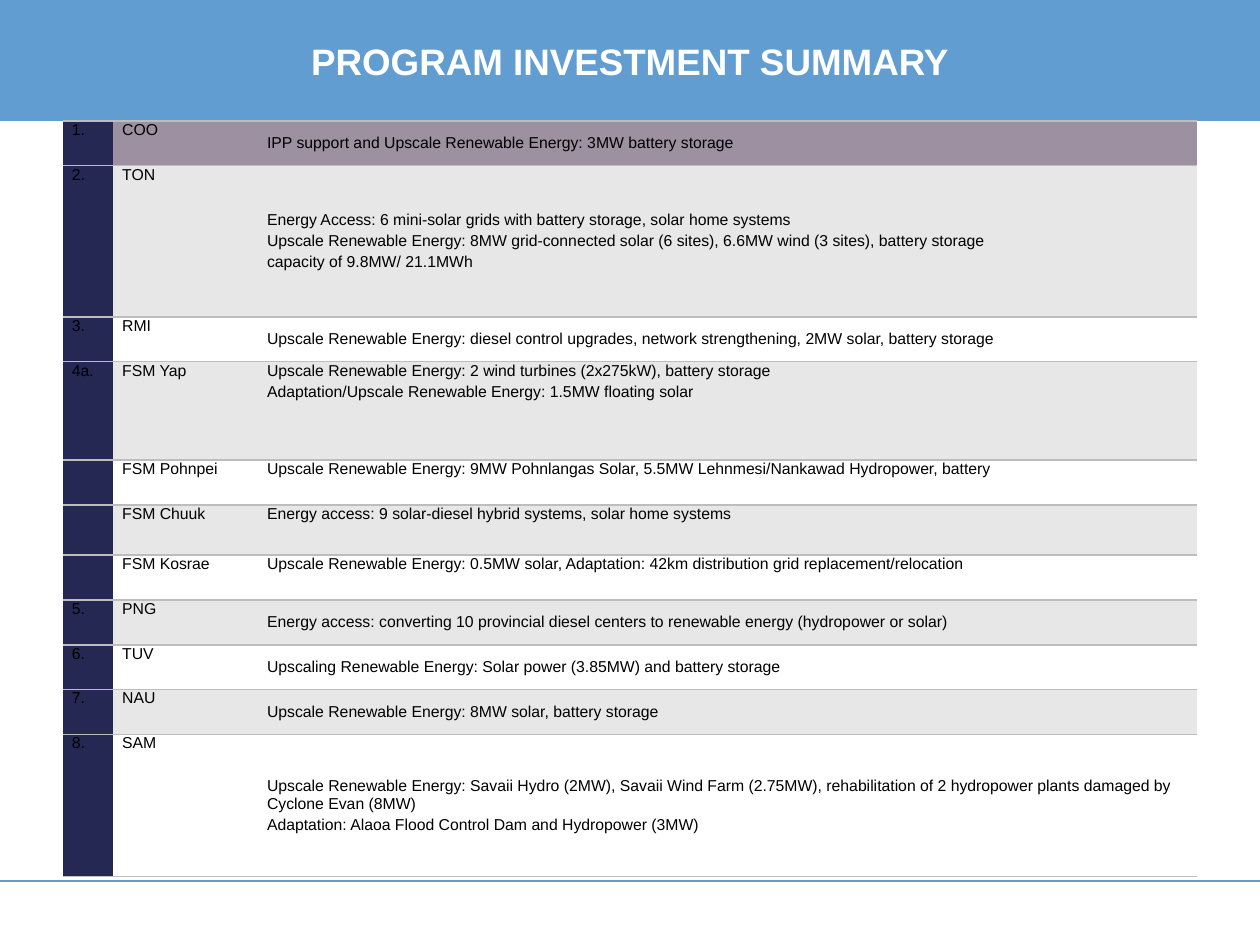
from pptx import Presentation
from pptx.dml.color import RGBColor
from pptx.enum.shapes import MSO_CONNECTOR as Connector, MSO_SHAPE as Preset
from pptx.enum.text import MSO_ANCHOR as Anchor, PP_ALIGN as Align
from pptx.oxml.ns import qn
from pptx.util import Inches, Pt
from lxml.etree import SubElement, Element

COLORS = {
    "band": "629DD1",
    "navy": "242852",
    "mauve": "9D90A0",
    "gray": "E7E7E7",
    "white": "FFFFFF",
    "border": "BDBDBD",
    "text": "000000",
}
COLUMN_WIDTHS = [0.4, 1.15, 7.45]
TABLE_HEIGHT = 6
TALL_ROWS = {1: 1.2, 3: 0.78, 5: 0.4, 10: 1.13}

PROGRAMS = [
    ("1.", "COO", ["IPP support and Upscale Renewable Energy: 3MW battery storage"]),
    ("2.", "TON", [
        "Energy Access: 6 mini-solar grids with battery storage, solar home systems",
        "Upscale Renewable Energy: 8MW grid-connected solar (6 sites), 6.6MW wind (3 sites), battery storage",
        "capacity of 9.8MW/ 21.1MWh"]),
    ("3.", "RMI", ["Upscale Renewable Energy: diesel control upgrades, network strengthening, 2MW solar, battery storage"]),
    ("4a.", "FSM Yap", [
        "Upscale Renewable Energy: 2 wind turbines (2x275kW), battery storage",
        "Adaptation/Upscale Renewable Energy: 1.5MW floating solar"]),
    ("", "FSM Pohnpei", ["Upscale Renewable Energy: 9MW Pohnlangas Solar, 5.5MW Lehnmesi/Nankawad Hydropower, battery"]),
    ("", "FSM Chuuk", ["Energy access: 9 solar-diesel hybrid systems, solar home systems"]),
    ("", "FSM Kosrae", ["Upscale Renewable Energy: 0.5MW solar, Adaptation: 42km distribution grid replacement/relocation"]),
    ("5.", "PNG", ["Energy access: converting 10 provincial diesel centers to renewable energy (hydropower or solar)"]),
    ("6.", "TUV", ["Upscaling Renewable Energy: Solar power (3.85MW) and battery storage"]),
    ("7.", "NAU", ["Upscale Renewable Energy: 8MW solar, battery storage"]),
    ("8.", "SAM", [
        "Upscale Renewable Energy: Savaii Hydro (2MW), Savaii Wind Farm (2.75MW), rehabilitation of 2 hydropower plants damaged by Cyclone Evan (8MW)",
        "Adaptation: Alaoa Flood Control Dam and Hydropower (3MW)"]),
]


class SlideBuilder:
    font = "Arial"
    title_size = 21
    body_size = 9

    def __init__(self, slide):
        self.slide = slide

    def color(self, name):
        return RGBColor.from_string(COLORS[name])

    def style(self, paragraph, size, color, bold=False):
        for font in [paragraph.font] + [run.font for run in paragraph.runs]:
            font.name, font.size, font.bold = self.font, Pt(size), bold
            font.color.rgb = self.color(color)

    def band(self, left, top, width, height):
        band = self.slide.shapes.add_shape(
            Preset.RECTANGLE, Inches(left), Inches(top), Inches(width), Inches(height))
        band.shadow.inherit = False
        band.fill.solid()
        band.fill.fore_color.rgb = self.color("band")
        band.line.fill.background()

    def rule(self, start, end, y):
        rule = self.slide.shapes.add_connector(
            Connector.STRAIGHT, Inches(start), Inches(y), Inches(end), Inches(y))
        rule.line.color.rgb = self.color("band")
        rule.line.width = Pt(1)
        SubElement(rule._element.spPr, qn("a:effectLst"))

    def title(self, text, left, top, width, height):
        frame = self.slide.shapes.add_textbox(
            Inches(left), Inches(top), Inches(width), Inches(height)).text_frame
        frame.word_wrap = True
        frame.vertical_anchor = Anchor.MIDDLE
        frame.margin_left = frame.margin_right = frame.margin_top = frame.margin_bottom = 0
        frame.text = text
        frame.paragraphs[0].alignment = Align.CENTER
        self.style(frame.paragraphs[0], self.title_size, "white", bold=True)

    def borders(self, cell):
        properties = cell._tc.get_or_add_tcPr()
        for position, side in enumerate(["lnL", "lnR", "lnT", "lnB"]):
            border = Element(qn(f"a:{side}"), w=str(Pt(1)))
            if side in ("lnT", "lnB"):
                fill = SubElement(border, qn("a:solidFill"))
                SubElement(fill, qn("a:srgbClr"), val=COLORS["border"])
            else:
                SubElement(border, qn("a:noFill"))
            properties.insert(position, border)

    def cell(self, cell, lines, fill, anchor):
        cell.margin_left = cell.margin_right = Inches(0.07)
        cell.margin_top = cell.margin_bottom = 0
        cell.vertical_anchor = anchor
        cell.fill.solid()
        cell.fill.fore_color.rgb = self.color(fill)
        cell.text_frame.text = "\n".join(lines)
        for index, paragraph in enumerate(cell.text_frame.paragraphs):
            paragraph.space_before = Pt(2 if index else 0)
            self.style(paragraph, self.body_size, "text")
        self.borders(cell)

    def table(self, programs, left, top):
        table = self.slide.shapes.add_table(
            len(programs), len(COLUMN_WIDTHS), Inches(left), Inches(top),
            Inches(sum(COLUMN_WIDTHS)), Inches(TABLE_HEIGHT)).table
        table.first_row = table.horz_banding = False
        for column, width in zip(table.columns, COLUMN_WIDTHS):
            column.width = Inches(width)
        short_row = (TABLE_HEIGHT - sum(TALL_ROWS.values())) / (len(programs) - len(TALL_ROWS))
        for index, (number, country, projects) in enumerate(programs):
            table.rows[index].height = Inches(TALL_ROWS.get(index, short_row))
            fill = "mauve" if index == 0 else "gray" if index % 2 else "white"
            anchor = Anchor.TOP if country.startswith("FSM") else Anchor.MIDDLE
            self.cell(table.cell(index, 0), [number], "navy", Anchor.TOP)
            self.cell(table.cell(index, 1), [country], fill, Anchor.TOP)
            self.cell(table.cell(index, 2), projects, fill, anchor)


def main():
    deck = Presentation()
    deck.slide_width, deck.slide_height = Inches(10), Inches(7.5)
    builder = SlideBuilder(deck.slides.add_slide(deck.slide_layouts[6]))
    builder.band(0, 0, 10, 0.96)
    builder.rule(0, 10, 6.99)
    builder.title("PROGRAM INVESTMENT SUMMARY", 0.5, 0.01, 9, 0.95)
    builder.table(PROGRAMS, 0.5, 0.96)
    deck.save("out.pptx")


if __name__ == "__main__":
    main()
